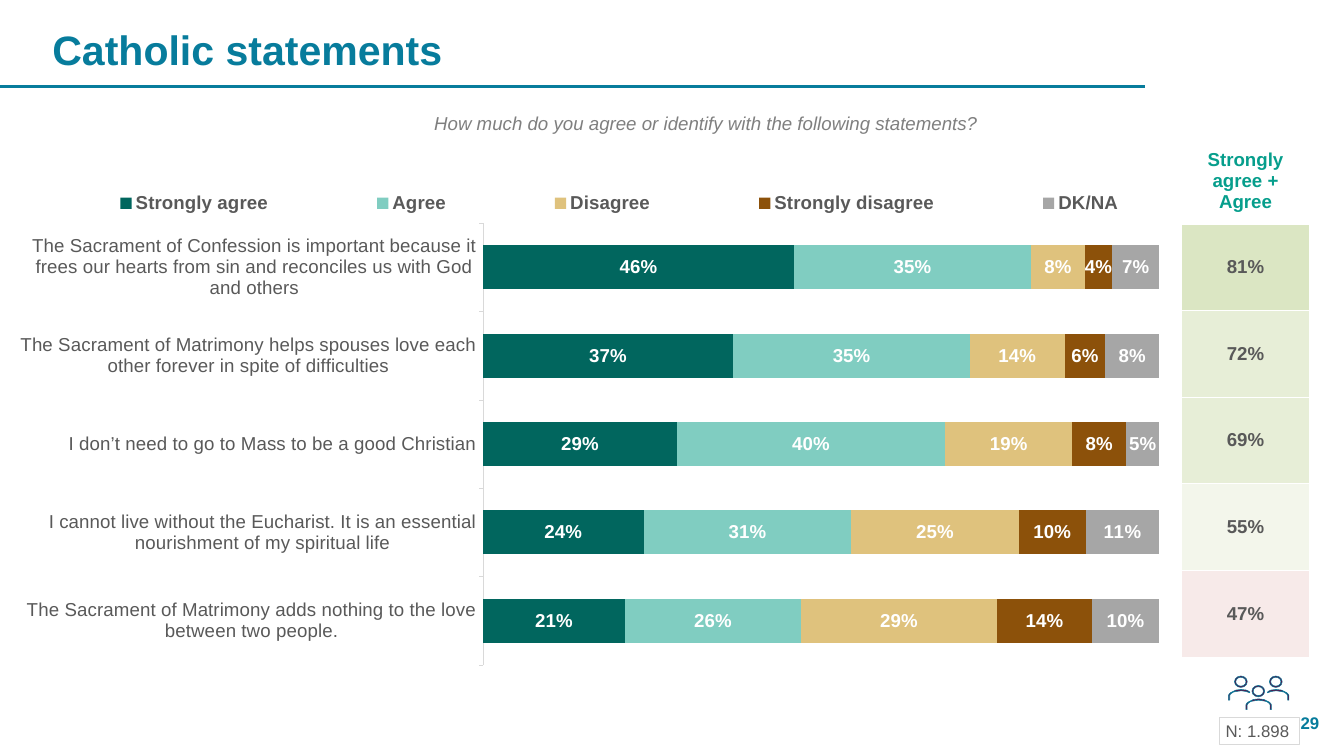
from lxml import etree
from pptx import Presentation
from pptx.chart.data import CategoryChartData
from pptx.dml.color import RGBColor
from pptx.enum import chart as charts, shapes, text
from pptx.oxml import parse_xml
from pptx.oxml.ns import nsdecls, qn
from pptx.util import Inches, Pt

FONT = "Arial"
TEAL, GREY, WHITE, PALE, PLUM = "077C9C", "595959", "FFFFFF", "D9D9D9", "660039"

STATEMENTS = [
    "The Sacrament of Confession is important because it frees our hearts from sin and reconciles us with God and others",
    "The Sacrament of Matrimony helps spouses love each other forever in spite of difficulties",
    "I don’t need to go to Mass to be a good Christian",
    "I cannot live without the Eucharist. It is an essential nourishment of my spiritual life",
    "The Sacrament of Matrimony adds nothing to the love between two people.",
]
ANSWERS = [
    ("Strongly agree", "01665E", (0.46, 0.37, 0.29, 0.24, 0.21)),
    ("Agree", "80CDC1", (0.35, 0.35, 0.40, 0.31, 0.26)),
    ("Disagree", "DFC27D", (0.08, 0.14, 0.19, 0.25, 0.29)),
    ("Strongly disagree", "8C510A", (0.04, 0.06, 0.08, 0.10, 0.14)),
    ("DK/NA", "A6A6A6", (0.07, 0.08, 0.05, 0.11, 0.10)),
]
TOTALS = [("81%", "C3D69B"), ("72%", "D7E4BD"), ("69%", "D7E4BD"),
          ("55%", "EBF1DE"), ("47%", "F2DCDB")]

# Left half of a pair of shoulders, from the arm to the neck
SHOULDER_OUTER = [(-0.19, 0.16), (-0.19, 0.09), (-0.18, 0.07), (-0.16, 0.05),
                  (-0.12, 0.03), (-0.08, 0.01), (0, 0)]
SHOULDER_INNER = [(-0.17, 0.16), (-0.17, 0.09), (-0.16, 0.07), (-0.12, 0.04),
                  (-0.07, 0.03), (0, 0.02)]
HIDDEN_SHOULDER = [(0.08, 0.01), (0.12, 0.03), (0.13, 0.05), (0.07, 0.03)]


def rgb(color):
    return RGBColor.from_string(color)


def box(left, top, width, height):
    return [Inches(value) for value in (left, top, width, height)]


def style_font(font, size, color, bold=False, italic=False):
    font.name, font.size = FONT, Pt(size)
    font.bold, font.italic = bold, italic
    font.color.rgb = rgb(color)


def write(frame, words, size, color, align=text.PP_ALIGN.LEFT, **style):
    frame.word_wrap = True
    paragraph = frame.paragraphs[0]
    paragraph.alignment = align
    run = paragraph.add_run()
    run.text = words
    style_font(run.font, size, color, **style)


def add_text(slide, place, words, size, color, anchor=text.MSO_ANCHOR.MIDDLE, **style):
    frame = slide.shapes.add_textbox(*box(*place)).text_frame
    frame.vertical_anchor = anchor
    write(frame, words, size, color, **style)


def paint(shape, fill, line, width):
    shape.shadow.inherit = False
    shape.fill.solid()
    shape.fill.fore_color.rgb = rgb(fill)
    shape.line.color.rgb = rgb(line)
    shape.line.width = Pt(width)


def add_rule(slide, left, right, top):
    rule = slide.shapes.add_connector(
        shapes.MSO_CONNECTOR.STRAIGHT, Inches(left), Inches(top), Inches(right), Inches(top))
    rule.line.color.rgb = rgb(TEAL)
    rule.line.width = Pt(3)
    etree.SubElement(rule._element.spPr, qn("a:effectLst"))


def set_layout(element, x, y, width, height, inner=False):
    """Place the plot area or the legend by fractions of the chart."""
    for old in element.findall(qn("c:layout")):
        element.remove(old)
    target = '<c:layoutTarget val="inner"/>' if inner else ""
    layout = parse_xml(
        f'<c:layout {nsdecls("c")}><c:manualLayout>{target}'
        f'<c:xMode val="edge"/><c:yMode val="edge"/><c:x val="{x}"/><c:y val="{y}"/>'
        f'<c:w val="{width}"/><c:h val="{height}"/></c:manualLayout></c:layout>')
    element.insert(0 if inner else 1, layout)


def add_answer_chart(slide):
    data = CategoryChartData(number_format="0%")
    data.categories = STATEMENTS
    for name, _, values in ANSWERS:
        data.add_series(name, values)
    chart = slide.shapes.add_chart(
        charts.XL_CHART_TYPE.BAR_STACKED_100, *box(0.17, 1.86, 18.37, 8.04), data).chart
    chart.has_title = False
    style_font(chart.font, 18, "000000")

    plot = chart.plots[0]
    plot.gap_width, plot.overlap = 100, 100
    plot.vary_by_categories = False
    for series, (_, color, _) in zip(plot.series, ANSWERS):
        series.format.fill.solid()
        series.format.fill.fore_color.rgb = rgb(color)
        labels = series.data_labels
        labels.show_value = True
        labels.number_format, labels.number_format_is_linked = "0%", False
        labels.position = charts.XL_LABEL_POSITION.CENTER
        style_font(labels.font, 20, WHITE, bold=True)

    statements = chart.category_axis
    statements.reverse_order = True
    statements.major_tick_mark = charts.XL_TICK_MARK.OUTSIDE
    statements.format.line.color.rgb = rgb(PALE)
    statements.format.line.width = Pt(0.75)
    style_font(statements.tick_labels.font, 20, GREY)
    chart.value_axis.has_major_gridlines = False
    chart.value_axis.visible = False

    chart.has_legend = True
    legend = chart.legend
    legend.position = charts.XL_LEGEND_POSITION.TOP
    legend.include_in_layout = False
    style_font(legend.font, 20, GREY, bold=True)
    set_layout(legend._element, 0.005, 0.11, 0.975, 0.07)
    set_layout(chart._chartSpace.chart.plotArea, 0.382, 0.182, 0.548, 0.818, inner=True)


def set_borders(cell, bottom):
    properties = cell._tc.get_or_add_tcPr()
    for index, (side, width) in enumerate(zip("LRTB", (1, 1, 1, bottom))):
        properties.insert(index, parse_xml(
            f'<a:ln{side} {nsdecls("a")} w="{Pt(width)}"><a:solidFill>'
            f'<a:srgbClr val="{WHITE}"/></a:solidFill></a:ln{side}>'))


def fill_cell(cell, words, color, margin, fill=None, bottom=1):
    cell.vertical_anchor = text.MSO_ANCHOR.MIDDLE
    cell.margin_left = cell.margin_right = Inches(margin)
    cell.margin_top = cell.margin_bottom = Inches(margin)
    write(cell.text_frame, words, 20, color, text.PP_ALIGN.CENTER, bold=True)
    if fill:
        cell.fill.solid()
        cell.fill.fore_color.rgb = rgb(fill)
        tint = cell._tc.tcPr.find(".//" + qn("a:srgbClr"))
        etree.SubElement(tint, qn("a:alpha"), val="60000")
    else:
        cell.fill.background()
    set_borders(cell, bottom)


def add_total_table(slide):
    table = slide.shapes.add_table(
        len(TOTALS) + 1, 1, *box(17.58, 2.05, 1.91, 7.72)).table
    table.horz_banding = False
    for row in table.rows:
        row.height = Inches(1.29)
    table.rows[0].height = Inches(1.28)
    fill_cell(table.cell(0, 0), "Strongly agree + Agree", "069E8C", 0.05, bottom=3)
    for row, (total, tint) in enumerate(TOTALS, start=1):
        fill_cell(table.cell(row, 0), total, GREY, 0.01, tint)


def add_person(slide, center, top, points, flip=1):
    """Ring for the head, with a thin outline of shoulders 0.2 below its top."""
    head = slide.shapes.add_shape(
        shapes.MSO_SHAPE.DONUT, *box(center - 0.1, top, 0.19, 0.17))
    head.adjustments[0] = 0.11
    outline = [(Inches(center + flip * x), Inches(top + 0.2 + y)) for x, y in points]
    builder = slide.shapes.build_freeform(*outline[0])
    builder.add_line_segments(outline[1:], close=True)
    for shape in (head, builder.convert_to_shape()):
        paint(shape, PLUM, TEAL, 0.59)


def mirrored(points):
    return [(-x, y) for x, y in reversed(points[:-1])]


def add_people_icon(slide):
    inner = SHOULDER_INNER[::-1]
    side = SHOULDER_OUTER + HIDDEN_SHOULDER + inner
    front = (SHOULDER_OUTER + mirrored(SHOULDER_OUTER)
             + mirrored(SHOULDER_INNER)[::-1] + inner)
    add_person(slide, 18.47, 10.06, side)
    add_person(slide, 18.99, 10.06, side, flip=-1)
    add_person(slide, 18.73, 10.2, front)


def add_sample_size(slide):
    label = slide.shapes.add_shape(shapes.MSO_SHAPE.RECTANGLE, *box(18.14, 10.68, 1.19, 0.4))
    paint(label, WHITE, PALE, 0.5)
    label.text_frame.vertical_anchor = text.MSO_ANCHOR.MIDDLE
    write(label.text_frame, "N: 1.898", 18, GREY)


def main():
    presentation = Presentation()
    presentation.slide_width, presentation.slide_height = Inches(20), Inches(11.25)
    slide = presentation.slides.add_slide(presentation.slide_layouts[6])
    add_rule(slide, 0, 17.04, 1.29)
    add_answer_chart(slide)
    add_text(slide, (17.4, 10.55, 2.33, 0.4), "29", 18, TEAL,
             align=text.PP_ALIGN.RIGHT, bold=True)
    add_text(slide, (3.7, 1.61, 13.69, 0.44),
             "How much do you agree or identify with the following statements? ", 20, "7F7F7F",
             anchor=text.MSO_ANCHOR.TOP, align=text.PP_ALIGN.CENTER, italic=True)
    add_total_table(slide)
    add_people_icon(slide)
    add_text(slide, (0.68, 0.39, 15.15, 0.69), "Catholic statements", 44, TEAL, bold=True)
    add_sample_size(slide)
    presentation.save("out.pptx")


if __name__ == "__main__":
    main()
